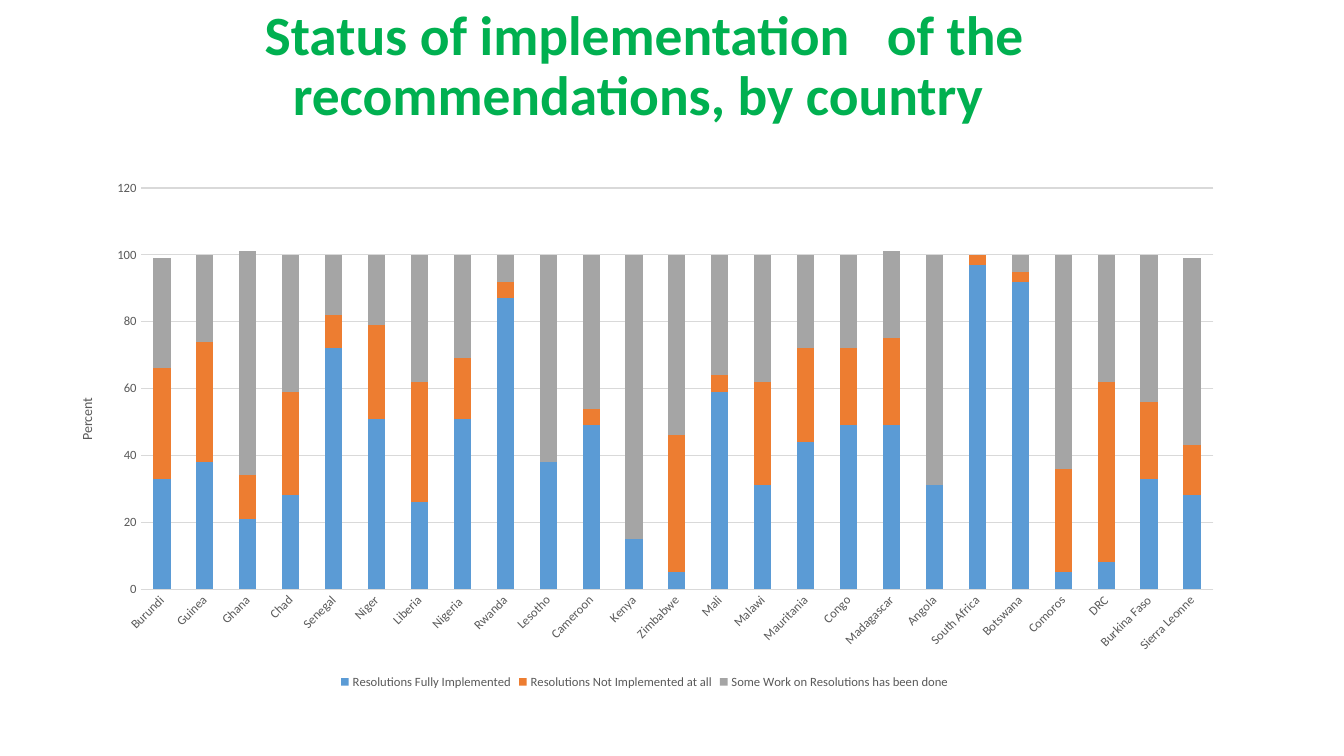
from dataclasses import dataclass

import pptx
import pptx.chart.data
import pptx.dml.color
import pptx.enum.chart
import pptx.enum.text
import pptx.oxml
import pptx.oxml.ns
import pptx.util
from pptx.util import Cm


@dataclass(frozen=True)
class Theme:
    font: str = "Calibri"
    title: str = "00B050"
    label: str = "595959"
    grid: str = "D9D9D9"
    series: tuple = ("5B9BD5", "ED7D31", "A5A5A5")
    title_size: float = 39.6
    axis_title_size: float = 10
    label_size: float = 9
    line_width: float = 0.75


STATUSES = (
    "Resolutions Fully Implemented",
    "Resolutions Not Implemented at all",
    "Some Work on Resolutions has been done",
)

COUNTRIES = (
    ("Burundi", 33, 33, 33),
    ("Guinea", 38, 36, 26),
    ("Ghana", 21, 13, 67),
    ("Chad", 28, 31, 41),
    ("Senegal", 72, 10, 18),
    ("Niger", 51, 28, 21),
    ("Liberia", 26, 36, 38),
    ("Nigeria ", 51, 18, 31),
    ("Rwanda", 87, 5, 8),
    ("Lesotho", 38, 0, 62),
    ("Cameroon", 49, 5, 46),
    ("Kenya", 15, 0, 85),
    ("Zimbabwe", 5, 41, 54),
    ("Mali", 59, 5, 36),
    ("Malawi", 31, 31, 38),
    ("Mauritania", 44, 28, 28),
    ("Congo", 49, 23, 28),
    ("Madagascar", 49, 26, 26),
    ("Angola", 31, 0, 69),
    ("South Africa", 97, 3, 0),
    ("Botswana", 92, 3, 5),
    ("Comoros", 5, 31, 64),
    ("DRC", 8, 54, 38),
    ("Burkina Faso", 33, 23, 44),
    ("Sierra Leonne", 28, 15, 56),
)


class SlideBuilder:
    def __init__(self, s, theme):
        self.s = s
        self.theme = theme

    def style_font(self, font, size, color, bold=False):
        font.name = self.theme.font
        font.size = pptx.util.Pt(size)
        font.bold = bold
        font.color.rgb = pptx.dml.color.RGBColor.from_string(color)

    def style_line(self, line):
        line.color.rgb = pptx.dml.color.RGBColor.from_string(self.theme.grid)
        line.width = pptx.util.Pt(self.theme.line_width)

    def title(self, text, left, top, width, height):
        sp = self.s.shapes.add_textbox(left, top, width, height)
        tf = sp.text_frame
        tf.word_wrap = True
        tf.vertical_anchor = pptx.enum.text.MSO_ANCHOR.MIDDLE
        p = tf.paragraphs[0]
        p.alignment = pptx.enum.text.PP_ALIGN.CENTER
        p.line_spacing = 0.9
        r = p.add_run()
        r.text = text
        self.style_font(r.font, self.theme.title_size, self.theme.title, True)

    def place(self, element, successors, **fractions):
        modes = "".join(f'<c:{axis}Mode val="edge"/>' for axis in "xy")
        values = "".join(f'<c:{k} val="{v}"/>' for k, v in fractions.items())
        target = '<c:layoutTarget val="inner"/>' if "w" in fractions else ""
        for old in element.findall(pptx.oxml.ns.qn("c:layout")):
            element.remove(old)
        layout = pptx.oxml.parse_xml(
            f'<c:layout {pptx.oxml.ns.nsdecls("c")}><c:manualLayout>'
            f"{target}{modes}{values}</c:manualLayout></c:layout>"
        )
        element.insert_element_before(layout, *successors)

    def stacked_columns(self, rows, names, axis_title, left, top, width, height):
        theme = self.theme
        data = pptx.chart.data.CategoryChartData(number_format="0")
        categories, *columns = zip(*rows)
        data.categories = categories
        for name, values in zip(names, columns):
            data.add_series(name, values)
        kind = pptx.enum.chart.XL_CHART_TYPE.COLUMN_STACKED
        chart = self.s.shapes.add_chart(kind, left, top, width, height, data).chart
        self.style_font(chart.font, theme.label_size, theme.label)
        chart.has_title = False
        chart.has_legend = True
        chart.legend.position = pptx.enum.chart.XL_LEGEND_POSITION.BOTTOM
        chart.legend.include_in_layout = False
        self.style_font(chart.legend.font, theme.label_size, theme.label)

        plot = chart.plots[0]
        plot.gap_width = 150
        plot.overlap = 100
        plot.vary_by_categories = False
        for series, color in zip(plot.series, theme.series):
            series.format.fill.solid()
            series.format.fill.fore_color.rgb = pptx.dml.color.RGBColor.from_string(color)

        for axis in (chart.category_axis, chart.value_axis):
            axis.major_tick_mark = pptx.enum.chart.XL_TICK_MARK.NONE
            axis.minor_tick_mark = pptx.enum.chart.XL_TICK_MARK.NONE
            self.style_font(axis.tick_labels.font, theme.label_size, theme.label)
        self.style_line(chart.category_axis.format.line)
        body = chart.category_axis._element.find(pptx.oxml.ns.qn("c:txPr")).bodyPr
        body.set("rot", "-2700000")
        body.set("vert", "horz")

        axis = chart.value_axis
        axis.minimum_scale = 0
        axis.maximum_scale = 120
        axis.major_unit = 20
        axis.format.line.fill.background()
        self.style_line(axis.major_gridlines.format.line)
        tf = axis.axis_title.text_frame
        r = tf.paragraphs[0].add_run()
        r.text = axis_title
        self.style_font(r.font, theme.axis_title_size, theme.label)
        tf._txBody.bodyPr.set("rot", "-5400000")
        tf._txBody.bodyPr.set("vert", "horz")

        self.place(axis.axis_title._element, ("c:overlay", "c:spPr", "c:txPr"), x=0.02, y=0.43)
        plot_area = chart._chartSpace.chart.plotArea
        self.place(plot_area, ("c:barChart",), x=0.075, y=0.034, w=0.905, h=0.767)


def main():
    prs = pptx.Presentation()
    prs.slide_width = Cm(33.86)
    prs.slide_height = Cm(19.05)
    s = prs.slides.add_slide(prs.slide_layouts[6])
    builder = SlideBuilder(s, Theme())
    left, width = Cm(1.3), Cm(29.87)
    builder.title(
        "Status of implementation   of the recommendations, by country ",
        left, Cm(0), width, Cm(3.4),
    )
    builder.stacked_columns(
        COUNTRIES, STATUSES, "Percent", left, Cm(4.29), width, Cm(13.18)
    )
    prs.save("out.pptx")


if __name__ == "__main__":
    main()
